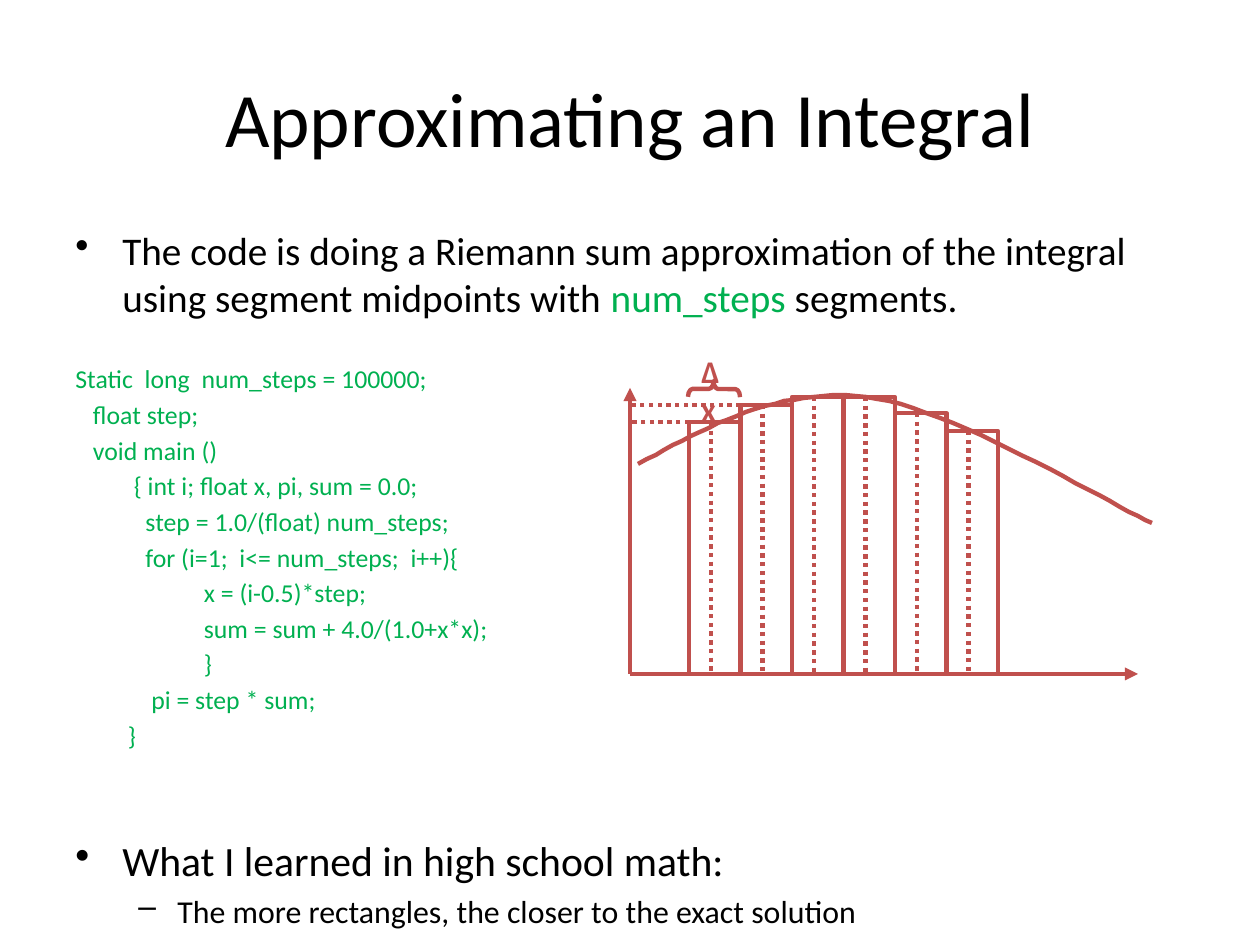
from dataclasses import dataclass

import pptx
import pptx.dml.color
import pptx.enum.dml
import pptx.enum.shapes
import pptx.enum.text
import pptx.oxml.ns
import pptx.util
from lxml import etree

PX = 914400 / 126
BLACK, GREEN, RED = "000000", "00B050", "C0504D"
SHAPES = pptx.enum.shapes.MSO_SHAPE


@dataclass
class Span:
    text: str
    size: float
    color: str = BLACK
    bold: bool = False


@dataclass
class Para:
    spans: list[Span]
    bullet: str = ""
    indent: int = 0
    hang: int = 0
    before: float = 0


@dataclass
class Point:
    x: int
    y: int


def px(length: float) -> int:
    return round(length * PX)


def rgb(value: str):
    return pptx.dml.color.RGBColor.from_string(value)


def add_text(page, left: int, top: int, width: int, height: int,
             paras: list[Para], wrap=True, centered=False):
    box = page.shapes.add_textbox(px(left), px(top), px(width), px(height))
    frame = box.text_frame
    frame.word_wrap = wrap
    if centered:
        frame.vertical_anchor = pptx.enum.text.MSO_ANCHOR.MIDDLE
    for index, item in enumerate(paras):
        para = frame.paragraphs[0] if index == 0 else frame.add_paragraph()
        if centered:
            para.alignment = pptx.enum.text.PP_ALIGN.CENTER
        if index:
            para.space_before = pptx.util.Pt(item.before)
        if item.bullet:
            props = para._p.get_or_add_pPr()
            props.set("marL", str(px(item.indent)))
            props.set("indent", str(px(-item.hang)))
            bullet = etree.SubElement(props, pptx.oxml.ns.qn("a:buChar"))
            bullet.set("char", item.bullet)
        for part in item.spans:
            span = para.add_run()
            span.text = part.text
            span.font.name = "Calibri"
            span.font.size = pptx.util.Pt(part.size)
            span.font.bold = part.bold
            span.font.color.rgb = rgb(part.color)


def style_line(line, dotted=False):
    line.color.rgb = rgb(RED)
    line.width = pptx.util.Pt(2.5)
    if dotted:
        line.dash_style = pptx.enum.dml.MSO_LINE.ROUND_DOT


def add_outline(page, kind, left: float, top: int, width: float, height: int):
    shape = page.shapes.add_shape(kind, px(left), px(top), px(width), px(height))
    shape.shadow.inherit = False
    shape.fill.background()
    style_line(shape.line)
    return shape


def add_line(page, start: Point, end: Point, dotted=False, arrow=False):
    line = page.shapes.add_connector(pptx.enum.shapes.MSO_CONNECTOR.STRAIGHT,
                                     px(start.x), px(start.y), px(end.x), px(end.y))
    style_line(line.line, dotted)
    if arrow:
        head = etree.SubElement(line.line._get_or_add_ln(), pptx.oxml.ns.qn("a:tailEnd"))
        head.set("type", "triangle")
    etree.SubElement(line._element.spPr, pptx.oxml.ns.qn("a:effectLst"))


def bezier(points: list[Point], steps: int = 24) -> list[tuple[float, float]]:
    """Points along one cubic curve, without its start."""
    result = []
    for step in range(1, steps + 1):
        t = step / steps
        weights = ((1 - t) ** 3, 3 * t * (1 - t) ** 2, 3 * t * t * (1 - t), t ** 3)
        result.append((sum(w * p.x for w, p in zip(weights, points)),
                       sum(w * p.y for w, p in zip(weights, points))))
    return result


def add_curve(page, points: list[Point]):
    builder = page.shapes.build_freeform(points[0].x, points[0].y, scale=PX)
    for first in range(0, len(points) - 1, 3):
        builder.add_line_segments(bezier(points[first:first + 4]), close=False)
    curve = builder.convert_to_shape()
    curve.shadow.inherit = False
    curve.fill.background()
    style_line(curve.line)


CODE = """\
Static  long  num_steps = 100000;
   float step;
   void main ()
          { int i; float x, pi, sum = 0.0;
            step = 1.0/(float) num_steps;
            for (i=1;  i<= num_steps;  i++){
                      x = (i-0.5)*step;
                      sum = sum + 4.0/(1.0+x*x);
                      }
             pi = step * sum;
         }"""


def add_riemann_sum(page):
    origin = Point(630, 674)
    first_left, step, middle = 689, 51.5, 22
    tops = [422, 405, 397, 397, 413, 431]

    # Axes and curve
    add_line(page, origin, Point(origin.x, 388), arrow=True)
    add_line(page, origin, Point(1138, origin.y), arrow=True)
    add_curve(page, [Point(638, 464), Point(708, 426), Point(780, 387), Point(866, 397),
                     Point(951, 407), Point(1104, 501), Point(1152, 523)])

    # Segments, their midpoints and the first two heights
    lefts = [first_left + step * index for index in range(len(tops))]
    for left, top in zip(lefts, tops):
        add_outline(page, SHAPES.RECTANGLE, left, top, step, origin.y - top)
    for left, top in zip(lefts, tops):
        add_line(page, Point(left + middle, top), Point(left + middle, origin.y), dotted=True)
    for left, top in zip(lefts[:2], tops):
        add_line(page, Point(left, top), Point(origin.x, top), dotted=True)

    # Segment width
    brace = add_outline(page, SHAPES.LEFT_BRACE, 706, 363, 16, 52)
    brace.rotation = 90.4
    brace.adjustments[0] = 0.29
    brace.adjustments[1] = 0.51
    add_text(page, 689, 346, 52, 40, [Para([Span("Δx", 18, RED, True)])])


def main():
    deck = pptx.Presentation()
    deck.slide_width, deck.slide_height = px(1260), px(945)
    page = deck.slides.add_slide(deck.slide_layouts[6])

    # Title and introduction
    add_text(page, 63, 38, 1134, 158, [Para([Span("Approximating an Integral", 44)])],
             centered=True)
    add_text(page, 63, 220, 1134, 110, [Para([
        Span("The code is doing a Riemann sum approximation of the integral "
             "using segment midpoints with ", 22.4),
        Span("num_steps", 22.4, GREEN),
        Span(" segments.", 22.4)], "•", 47, 47)])

    # Code
    add_text(page, 63, 357, 500, 405,
             [Para([Span(text, 14.7, GREEN)], before=2.7) for text in CODE.splitlines()],
             wrap=False)

    # Conclusion
    add_text(page, 63, 829, 1134, 105, [
        Para([Span("What I learned in high school math:", 23.8)], "•", 47, 47),
        Para([Span("The more rectangles, the closer to the exact solution", 18.2)],
             "–", 102, 39, 3.5)])

    add_riemann_sum(page)
    deck.save("out.pptx")


if __name__ == "__main__":
    main()
